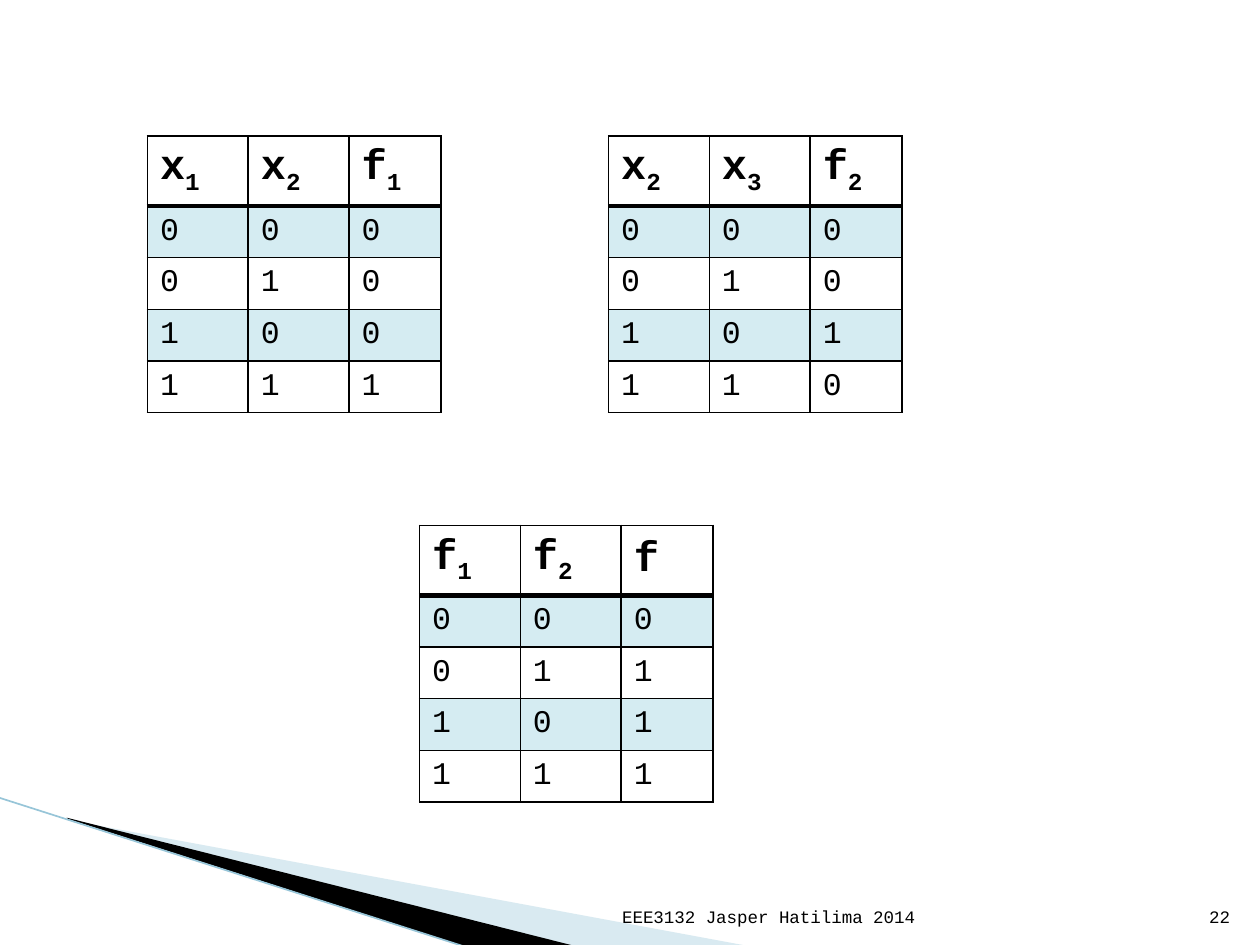
from lxml.etree import SubElement
from pptx import Presentation
from pptx.dml.color import RGBColor
from pptx.enum.text import MSO_ANCHOR as Anchor, PP_ALIGN as Align
from pptx.enum.shapes import MSO_CONNECTOR as Connector
from pptx.oxml.ns import qn
from pptx.util import Inches, Pt

BLACK = RGBColor(0x00, 0x00, 0x00)
TEAL = RGBColor(0x2D, 0xA2, 0xBF)
PALE_BLUE = RGBColor(0xA0, 0xCB, 0xDC)
EDGE_BLUE = RGBColor(0x97, 0xC5, 0xD8)

COLUMN_WIDTHS = (0.8, 0.8, 0.73)
ROW_HEIGHT = 0.41
INPUTS = ("00", "01", "10", "11")
# left, top, column names, output for each input pair
TRUTH_TABLES = (
    (1.17, 1.08, ("x1", "x2", "f1"), "0001"),
    (4.83, 1.08, ("x2", "x3", "f2"), "0010"),
    (3.33, 4.17, ("f1", "f2", "f"), "0111"),
)


def set_alpha(fill, percent):
    """Make a solid fill partly transparent."""
    color = fill._xPr.find(qn("a:solidFill"))[0]
    SubElement(color, qn("a:alpha"), val=str(percent * 1000))


def set_borders(cell, widths):
    """Draw black borders; widths maps L, R, T and B to points."""
    properties = cell._tc.get_or_add_tcPr()
    for side in "LRTB":
        line = SubElement(properties, qn(f"a:ln{side}"), w=str(Pt(widths[side])))
        solid = SubElement(line, qn("a:solidFill"))
        SubElement(solid, qn("a:srgbClr"), val=str(BLACK))


class SlideWriter:
    def __init__(self, page, font_name="Courier New", color=BLACK):
        self.page = page
        self.font_name = font_name
        self.color = color

    def add_span(self, para, text, size=18, bold=False, subscript=False):
        span = para.add_run()
        span.text = text
        span.font.name = self.font_name
        span.font.size = Pt(size)
        span.font.bold = bold
        span.font.color.rgb = self.color
        if subscript:
            span.font._element.set("baseline", "-25000")

    def add_wedge(self, points, color, alpha=100):
        start, *rest = [(Inches(x), Inches(y)) for x, y in points]
        builder = self.page.shapes.build_freeform(*start)
        builder.add_line_segments(rest, close=True)
        wedge = builder.convert_to_shape()
        wedge.shadow.inherit = False
        wedge.fill.solid()
        wedge.fill.fore_color.rgb = color
        if alpha < 100:
            set_alpha(wedge.fill, alpha)
        wedge.line.fill.background()

    def add_line(self, start, end, color, width):
        points = [Inches(value) for value in (*start, *end)]
        line = self.page.shapes.add_connector(Connector.STRAIGHT, *points)
        line.line.color.rgb = color
        line.line.width = Pt(width)
        SubElement(line._element.spPr, qn("a:effectLst"))

    def add_footer(self, text, left, width):
        box = self.page.shapes.add_textbox(
            Inches(left), Inches(7.01), Inches(width), Inches(0.4))
        frame = box.text_frame
        frame.word_wrap = True
        frame.vertical_anchor = Anchor.BOTTOM
        para = frame.paragraphs[0]
        para.alignment = Align.RIGHT
        self.add_span(para, text, size=10)

    def add_truth_table(self, left, top, names, outputs):
        rows = [names] + [pair + out for pair, out in zip(INPUTS, outputs)]
        table = self.page.shapes.add_table(
            len(rows), len(names), Inches(left), Inches(top),
            Inches(sum(COLUMN_WIDTHS)), Inches(ROW_HEIGHT * len(rows))).table
        table.first_row = table.horz_banding = False
        for column, width in zip(table.columns, COLUMN_WIDTHS):
            column.width = Inches(width)
        for r, row in enumerate(rows):
            table.rows[r].height = Inches(ROW_HEIGHT)
            for c, text in enumerate(row):
                self.fill_cell(table.cell(r, c), text, r)

    def fill_cell(self, cell, text, row):
        cell.vertical_anchor = Anchor.MIDDLE
        set_borders(cell, {"L": 1, "R": 1, "T": 3 if row == 1 else 1,
                           "B": 3 if row == 0 else 1})
        if row % 2:
            cell.fill.solid()
            cell.fill.fore_color.rgb = TEAL
            set_alpha(cell.fill, 20)
        else:
            cell.fill.background()
        para = cell.text_frame.paragraphs[0]
        if row == 0:
            self.add_span(para, text[0], size=24, bold=True)
            if text[1:]:
                self.add_span(para, text[1:], size=24, bold=True, subscript=True)
        else:
            self.add_span(para, text)


def main():
    deck = Presentation()
    deck.slide_width, deck.slide_height = Inches(10), Inches(7.5)
    writer = SlideWriter(deck.slides.add_slide(deck.slide_layouts[6]))

    writer.add_wedge([(0.55, 6.51), (5.95, 7.51), (4.56, 7.51), (0.55, 6.5)],
                     PALE_BLUE, alpha=40)
    writer.add_wedge([(0.53, 6.49), (4.57, 7.51), (3.72, 7.52), (0.54, 6.5)], BLACK)
    writer.add_line((-0.01, 6.33), (3.71, 7.52), EDGE_BLUE, 0.95)

    writer.add_footer("EEE3132 Jasper Hatilima 2014", 4.79, 2.57)
    writer.add_footer("22", 9.17, 0.69)

    for truth_table in TRUTH_TABLES:
        writer.add_truth_table(*truth_table)

    deck.save("out.pptx")


if __name__ == "__main__":
    main()
